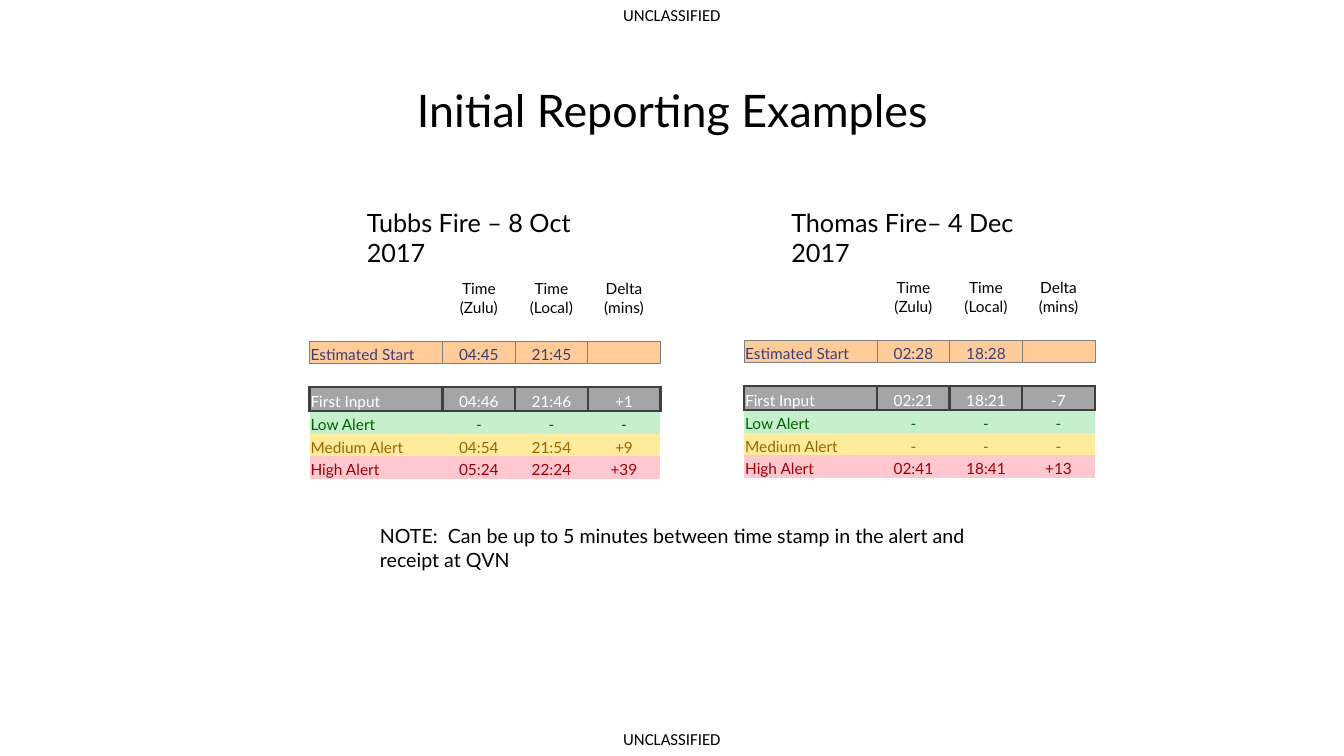
from lxml.etree import SubElement
from pptx import Presentation
from pptx.dml.color import RGBColor
from pptx.enum.text import MSO_ANCHOR as ANCHOR, PP_ALIGN as ALIGN
from pptx.oxml.ns import qn
from pptx.util import Inches, Pt

BLACK = RGBColor(0x00, 0x00, 0x00)
WHITE = RGBColor(0xFF, 0xFF, 0xFF)
ORANGE = RGBColor(0xFF, 0xCC, 0x99)
INDIGO = RGBColor(0x3F, 0x3F, 0x76)
GRAY = RGBColor(0xA5, 0xA5, 0xA5)
GREEN = RGBColor(0xC6, 0xEF, 0xCE)
DARK_GREEN = RGBColor(0x00, 0x61, 0x00)
YELLOW = RGBColor(0xFF, 0xEB, 0x9C)
BROWN = RGBColor(0x9C, 0x65, 0x00)
PINK = RGBColor(0xFF, 0xC7, 0xCE)
DARK_RED = RGBColor(0x9C, 0x00, 0x06)
THIN = (RGBColor(0x7F, 0x7F, 0x7F), Pt(0.5))
THICK = (RGBColor(0x3F, 0x3F, 0x3F), Pt(2))
NO_STYLE = "{2D5ABB26-0587-4C30-8999-92F81FD0307C}"

COL_WIDTHS = [1.32, 0.72, 0.72, 0.72]
ROWS = [
    (0.44, BLACK, None, {}),
    (0.22, BLACK, None, {"B": THIN}),
    (0.22, INDIGO, ORANGE, dict.fromkeys("LRTB", THIN)),
    (0.23, BLACK, None, {"T": THIN, "B": THICK}),
    (0.24, WHITE, GRAY, dict.fromkeys("LRTB", THICK)),
    (0.23, DARK_GREEN, GREEN, {}),
    (0.22, BROWN, YELLOW, {}),
    (0.22, DARK_RED, PINK, {}),
]
LABELS = ["", "", "Estimated Start", "", "First Input", "Low Alert", "Medium Alert", "High Alert"]
HEADER = ["Time (Zulu)", "Time (Local)", "Delta (mins)"]
BLANK = ["", "", ""]
DASHES = ["-", "-", "-"]
FIRES = [
    ("Tubbs Fire – 8 Oct 2017", 3.54, 2.39, 3.07, 2.73,
     [HEADER, BLANK, ["04:45", "21:45", ""], BLANK, ["04:46", "21:46", "+1"],
      DASHES, ["04:54", "21:54", "+9"], ["05:24", "22:24", "+39"]]),
    ("Thomas Fire– 4 Dec 2017", 7.75, 2.56, 7.38, 2.72,
     [HEADER, BLANK, ["02:28", "18:28", ""], BLANK, ["02:21", "18:21", "-7"],
      DASHES, DASHES, ["02:41", "18:41", "+13"]]),
]


def write(tf, text, size, color=BLACK, align=ALIGN.LEFT, font="Lato"):
    tf.text = text
    tf.word_wrap = True
    p = tf.paragraphs[0]
    p.alignment = align
    for r in p.runs:
        r.font.name = font
        r.font.size = Pt(size)
        r.font.color.rgb = color
    return p


def add_border(cell, side, color, width):
    tc_pr = cell._tc.get_or_add_tcPr()
    ln = SubElement(tc_pr, qn("a:ln" + side), w=str(width))
    fill = SubElement(ln, qn("a:solidFill"))
    SubElement(fill, qn("a:srgbClr"), val=str(color))


prs = Presentation()
prs.slide_width = Inches(13.33)
prs.slide_height = Inches(7.5)
s = prs.slides.add_slide(prs.slide_layouts[5])

for top in (0, 7.18):
    sp = s.shapes.add_textbox(0, Inches(top), prs.slide_width, Inches(0.3))
    write(sp.text_frame, "UNCLASSIFIED", 12, align=ALIGN.CENTER, font="Calibri")

title = s.shapes.title
title.left, title.top = Inches(0.92), Inches(0.4)
title.width, title.height = Inches(11.5), Inches(1.45)
p = write(title.text_frame, "Initial Reporting Examples", 32, align=ALIGN.CENTER)
p.line_spacing = 0.9
title.text_frame.vertical_anchor = ANCHOR.MIDDLE

for heading, head_left, head_width, left, top, times in FIRES:
    sp = s.shapes.add_textbox(Inches(head_left), Inches(2.01), Inches(head_width), Inches(0.4))
    write(sp.text_frame, heading, 18)

    table = s.shapes.add_table(len(ROWS), len(COL_WIDTHS), Inches(left), Inches(top),
                               Inches(sum(COL_WIDTHS)), Inches(2.01)).table
    table.first_row = False
    table.horz_banding = False
    table._tbl.tblPr.find(qn("a:tableStyleId")).text = NO_STYLE
    for col, width in zip(table.columns, COL_WIDTHS):
        col.width = Inches(width)

    for i, (height, color, fill, borders) in enumerate(ROWS):
        table.rows[i].height = Inches(height)
        for j, text in enumerate([LABELS[i]] + times[i]):
            cell = table.cell(i, j)
            cell.margin_left = cell.margin_right = cell.margin_top = Inches(0.01)
            cell.margin_bottom = 0
            cell.vertical_anchor = ANCHOR.BOTTOM if i else ANCHOR.MIDDLE
            p = write(cell.text_frame, text, 11, color, ALIGN.CENTER if j else ALIGN.LEFT)
            if not text:
                SubElement(p._p, qn("a:endParaRPr"), sz="1100")
            for side, (line_color, line_width) in borders.items():
                add_border(cell, side, line_color, line_width)
            if fill is None:
                cell.fill.background()
            else:
                cell.fill.solid()
                cell.fill.fore_color.rgb = fill

sp = s.shapes.add_textbox(Inches(3.67), Inches(5.15), Inches(6.03), Inches(0.34))
write(sp.text_frame, "NOTE:  Can be up to 5 minutes between time stamp in the alert and receipt at QVN", 14)

prs.save("out.pptx")
